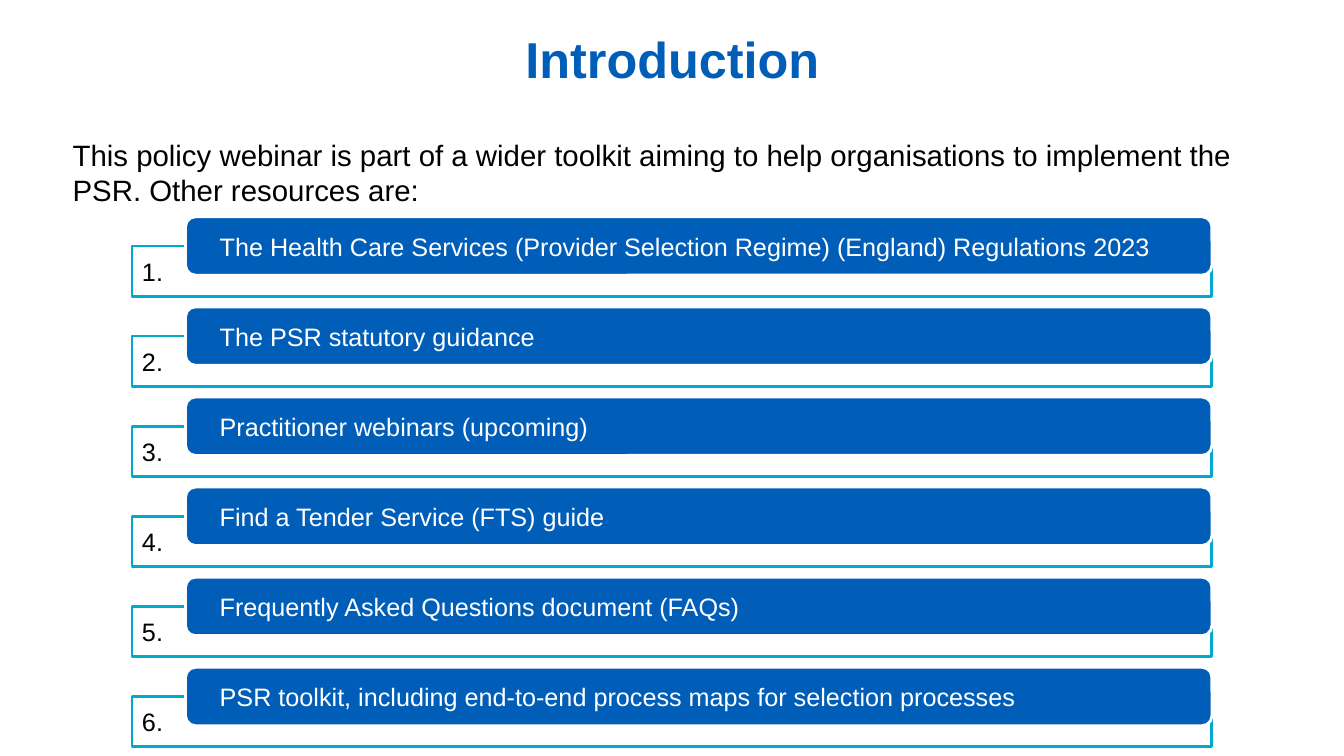
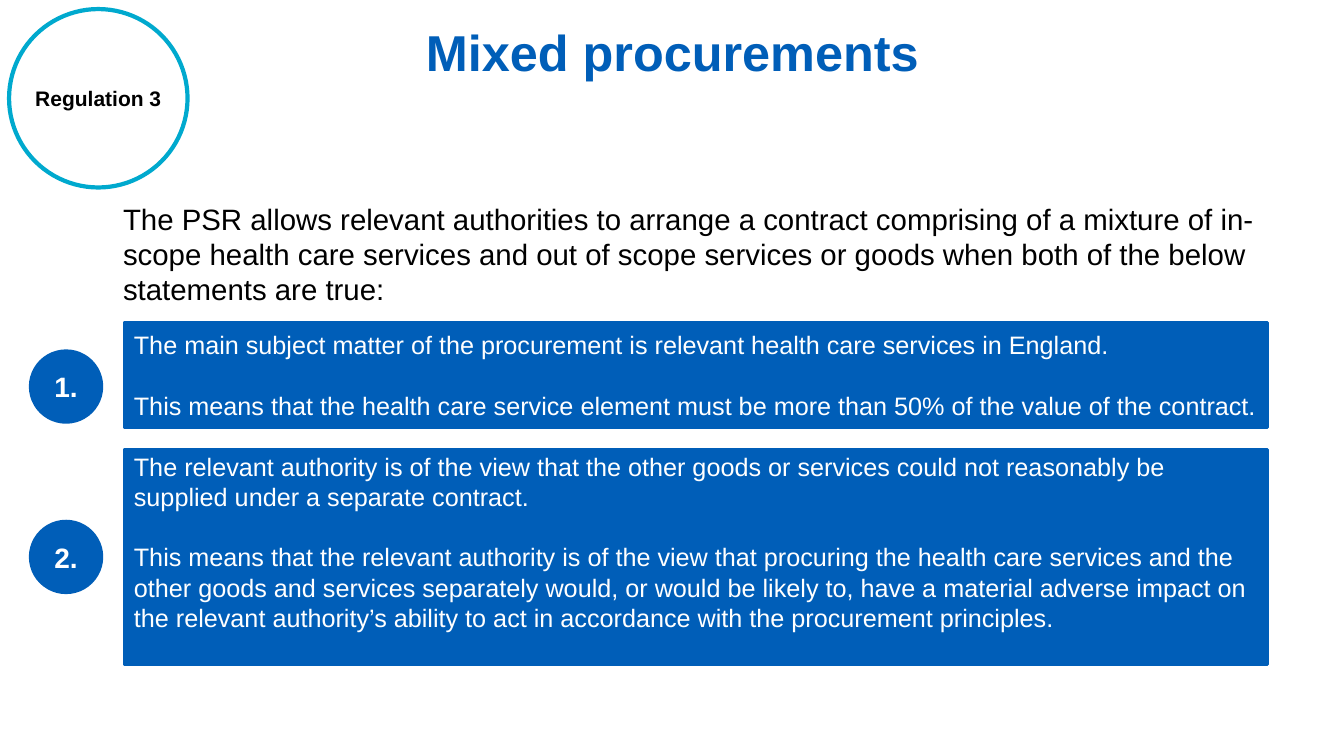
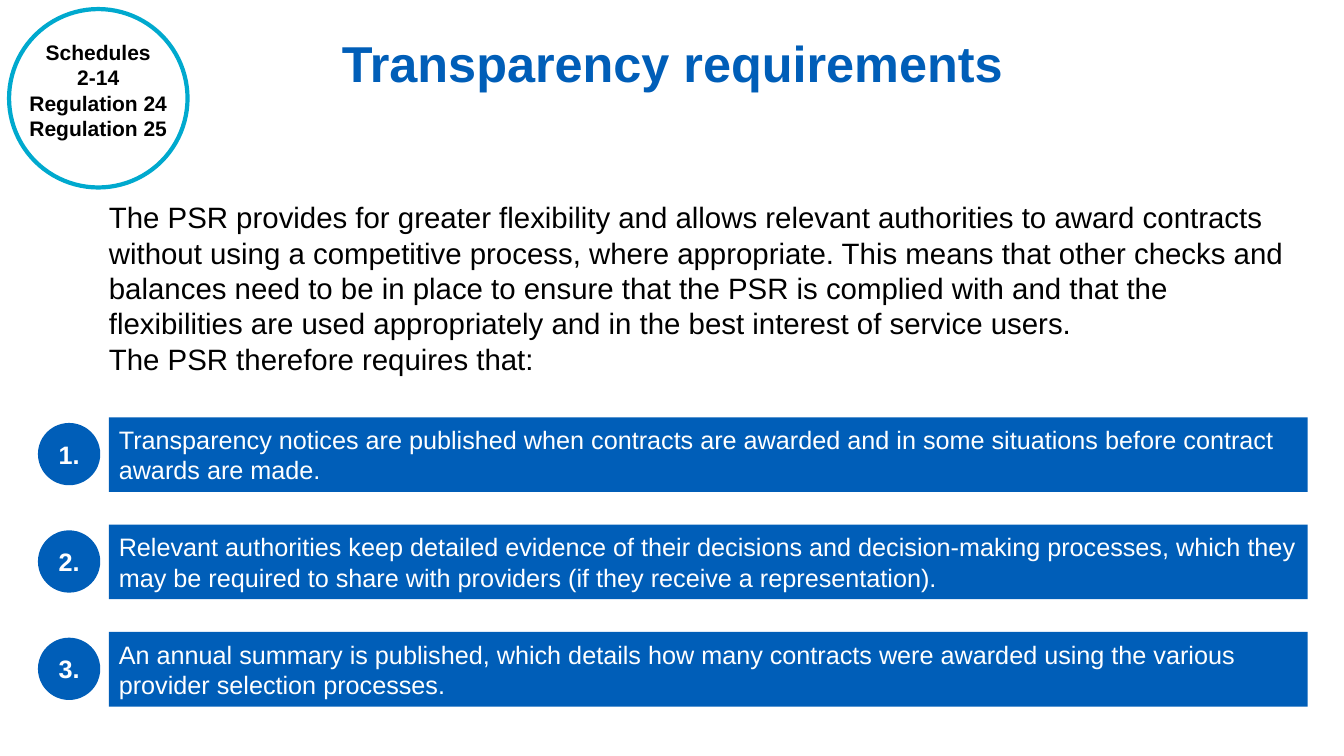
"""Builds three slides of a policy webinar on the Provider Selection Regime."""
from lxml import etree
from pptx import Presentation
from pptx.dml.color import RGBColor
from pptx.enum.shapes import MSO_SHAPE
from pptx.enum.text import MSO_ANCHOR, MSO_AUTO_SIZE, PP_ALIGN
from pptx.oxml.ns import qn
from pptx.util import Inches, Pt

RECTANGLE = MSO_SHAPE.RECTANGLE
ROUNDED = MSO_SHAPE.ROUNDED_RECTANGLE
OVAL = MSO_SHAPE.OVAL
MIDDLE, TOP = MSO_ANCHOR.MIDDLE, MSO_ANCHOR.TOP
LEFT, CENTER = PP_ALIGN.LEFT, PP_ALIGN.CENTER
NO_AUTOFIT = MSO_AUTO_SIZE.NONE

FONT = "Arial"
BLUE, TEAL, WHITE, BLACK = "005EB8", "00A9CE", "FFFFFF", "000000"
TITLE_AND_CONTENT = 1

RESOURCES = [
    "The Health Care Services (Provider Selection Regime) (England) Regulations 2023",
    "The PSR statutory guidance",
    "Practitioner webinars (upcoming)",
    "Find a Tender Service (FTS) guide",
    "Frequently Asked Questions document (FAQs)",
    "PSR toolkit, including end-to-end process maps for selection processes",
]
REQUIREMENTS = [
    "Transparency notices are published when contracts are awarded and in some "
    "situations before contract awards are made.",
    "Relevant authorities keep detailed evidence of their decisions and "
    "decision-making processes, which they may be required to share with providers "
    "(if they receive a representation).",
    "An annual summary is published, which details how many contracts were awarded "
    "using the various provider selection processes.",
]


def rgb(color):
    """Turn a hex string into a colour."""
    return RGBColor.from_string(color)


def place(shape, left, top, width, height):
    """Move and size a shape, in inches."""
    shape.left, shape.top = Inches(left), Inches(top)
    shape.width, shape.height = Inches(width), Inches(height)


def write(frame, texts, size, color, bold=False, align=LEFT, gap=0):
    """Fill a text frame with one paragraph per text, gap points apart."""
    for index, text in enumerate(texts):
        para = frame.paragraphs[0] if index == 0 else frame.add_paragraph()
        para.text = text
        para.alignment = align
        para.space_before = Pt(gap if index else 0)
        para.font.name = FONT
        para.font.size = Pt(size)
        para.font.bold = bold
        para.font.color.rgb = rgb(color)


def add_title(slide, text, top):
    """Write the slide title in its placeholder."""
    place(slide.shapes.title, 3.13, top, 7.08, 1)
    frame = slide.shapes.title.text_frame
    frame.auto_size = NO_AUTOFIT
    frame.vertical_anchor = MIDDLE
    write(frame, [text], 36, BLUE, bold=True, align=CENTER)


def add_intro(slide, texts, left, top, width, height):
    """Write the introduction in the body placeholder, without bullets."""
    body = slide.placeholders[1]
    place(body, left, top, width, height)
    frame = body.text_frame
    frame.auto_size = NO_AUTOFIT
    frame.vertical_anchor = TOP
    for _ in texts[1:]:
        frame.add_paragraph()
    for para, text in zip(frame.paragraphs, texts):
        para.text = text
        para.space_before = Pt(0)
        properties = para._p.get_or_add_pPr()
        properties.set("marL", "0")
        properties.set("indent", "0")
        etree.SubElement(properties, qn("a:buNone"))
        para.font.name = FONT
        para.font.size = Pt(21)
        para.font.color.rgb = rgb(BLACK)


def add_panel(slide, kind, left, top, width, height, fill, line=None, weight=2):
    """Add a filled shape with middle-anchored text."""
    panel = slide.shapes.add_shape(
        kind, Inches(left), Inches(top), Inches(width), Inches(height))
    panel.shadow.inherit = False
    panel.fill.solid()
    panel.fill.fore_color.rgb = rgb(fill)
    if line:
        panel.line.color.rgb = rgb(line)
        panel.line.width = Pt(weight)
    else:
        panel.line.fill.background()
    panel.text_frame.word_wrap = True
    panel.text_frame.vertical_anchor = MIDDLE
    return panel


def set_margins(frame, side, top, bottom):
    """Set the text margins, in inches."""
    frame.margin_left = frame.margin_right = Inches(side)
    frame.margin_top, frame.margin_bottom = Inches(top), Inches(bottom)


def add_reference(slide, lines, lift=0):
    """Add the corner circle that cites the legislation, its text raised by lift."""
    circle = add_panel(slide, OVAL, 0.09, 0.09, 1.77, 1.77, WHITE, TEAL, 3)
    frame = circle.text_frame
    frame.word_wrap = False
    set_margins(frame, 0, 0, 2 * lift)
    write(frame, lines, 15, BLACK, bold=True, align=CENTER)


def add_number(slide, number, left, top, diameter, size):
    """Add a numbered blue circle."""
    circle = add_panel(slide, OVAL, left, top, diameter, diameter, BLUE, BLUE)
    set_margins(circle.text_frame, 0, 0.05, 0.05)
    write(circle.text_frame, [f"{number}."], size, WHITE, bold=True, align=CENTER)


def add_resource(slide, number, text, top):
    """Add a numbered frame with a rounded label over its upper edge."""
    frame = add_panel(slide, RECTANGLE, 1.31, top, 10.71, 0.5, WHITE, TEAL)
    write(frame.text_frame, [f"{number}."], 18, BLACK)
    label = add_panel(slide, ROUNDED, 1.84, top - 0.29, 10.18, 0.58, BLUE, WHITE)
    label.adjustments[0] = 0.17
    set_margins(label.text_frame, 0.31, 0.03, 0.03)
    write(label.text_frame, [text], 18, WHITE)


def build_introduction(slide):
    """Slide listing the resources of the toolkit."""
    add_title(slide, "Introduction", 0.08)
    add_intro(slide, [
        "This policy webinar is part of a wider toolkit aiming to help organisations "
        "to implement the PSR. Other resources are:"], 0.62, 1.31, 12.09, 0.81)
    first_top, last_top = 2.44, 6.91
    pitch = (last_top - first_top) / (len(RESOURCES) - 1)
    for index, text in enumerate(RESOURCES):
        add_resource(slide, index + 1, text, first_top + index * pitch)


def build_mixed_procurements(slide):
    """Slide with the two conditions for a mixed contract."""
    add_title(slide, "Mixed procurements", 0.01)
    add_intro(slide, [
        "The PSR allows relevant authorities to arrange a contract comprising of a "
        "mixture of in-scope health care services and out of scope services or goods "
        "when both of the below statements are true:"], 1.12, 1.94, 11.53, 1.18)
    add_reference(slide, ["Regulation 3"])
    conditions = [
        (3.2, 1.04, 0.05, 3.48, [
            "The main subject matter of the procurement is relevant health care "
            "services in England.",
            "This means that the health care service element must be more than 50% of "
            "the value of the contract."]),
        (4.46, 2.13, 0.35, 5.17, [
            "The relevant authority is of the view that the other goods or services "
            "could not reasonably be supplied under a separate contract.",
            "This means that the relevant authority is of the view that procuring the "
            "health care services and the other goods and services separately would, "
            "or would be likely to, have a material adverse impact on the relevant "
            "authority’s ability to act in accordance with the procurement "
            "principles."]),
    ]
    for number, condition in enumerate(conditions, 1):
        top, height, bottom_margin, number_top, texts = condition
        box = add_panel(slide, RECTANGLE, 1.23, top, 11.34, height, BLUE, BLUE)
        set_margins(box.text_frame, 0.1, 0.05, bottom_margin)
        write(box.text_frame, texts, 18, WHITE, gap=21.5)
        add_number(slide, number, 0.3, number_top, 0.71, 20)


def build_transparency(slide):
    """Slide with the three transparency requirements."""
    add_title(slide, "Transparency requirements", 0.12)
    add_reference(
        slide, ["Schedules", "2-14", "Regulation 24", "Regulation 25"], lift=0.08)
    add_intro(slide, [
        "The PSR provides for greater flexibility and allows relevant authorities to "
        "award contracts without using a competitive process, where appropriate. This "
        "means that other checks and balances need to be in place to ensure that the "
        "PSR is complied with and that the flexibilities are used appropriately and "
        "in the best interest of service users.",
        "The PSR therefore requires that:"], 0.98, 1.93, 11.89, 1.87)
    for index, text in enumerate(REQUIREMENTS):
        top = 4.14 + index * 1.065
        box = add_panel(slide, RECTANGLE, 1.08, top, 11.89, 0.74, BLUE)
        write(box.text_frame, [text], 18, WHITE)
        add_number(slide, index + 1, 0.39, top + 0.07, 0.59, 18)


def main():
    """Build and save the deck."""
    deck = Presentation()
    deck.slide_width, deck.slide_height = Inches(13.33), Inches(7.5)
    layout = deck.slide_layouts[TITLE_AND_CONTENT]
    for build in (build_introduction, build_mixed_procurements, build_transparency):
        build(deck.slides.add_slide(layout))
    deck.save("out.pptx")


if __name__ == "__main__":
    main()
